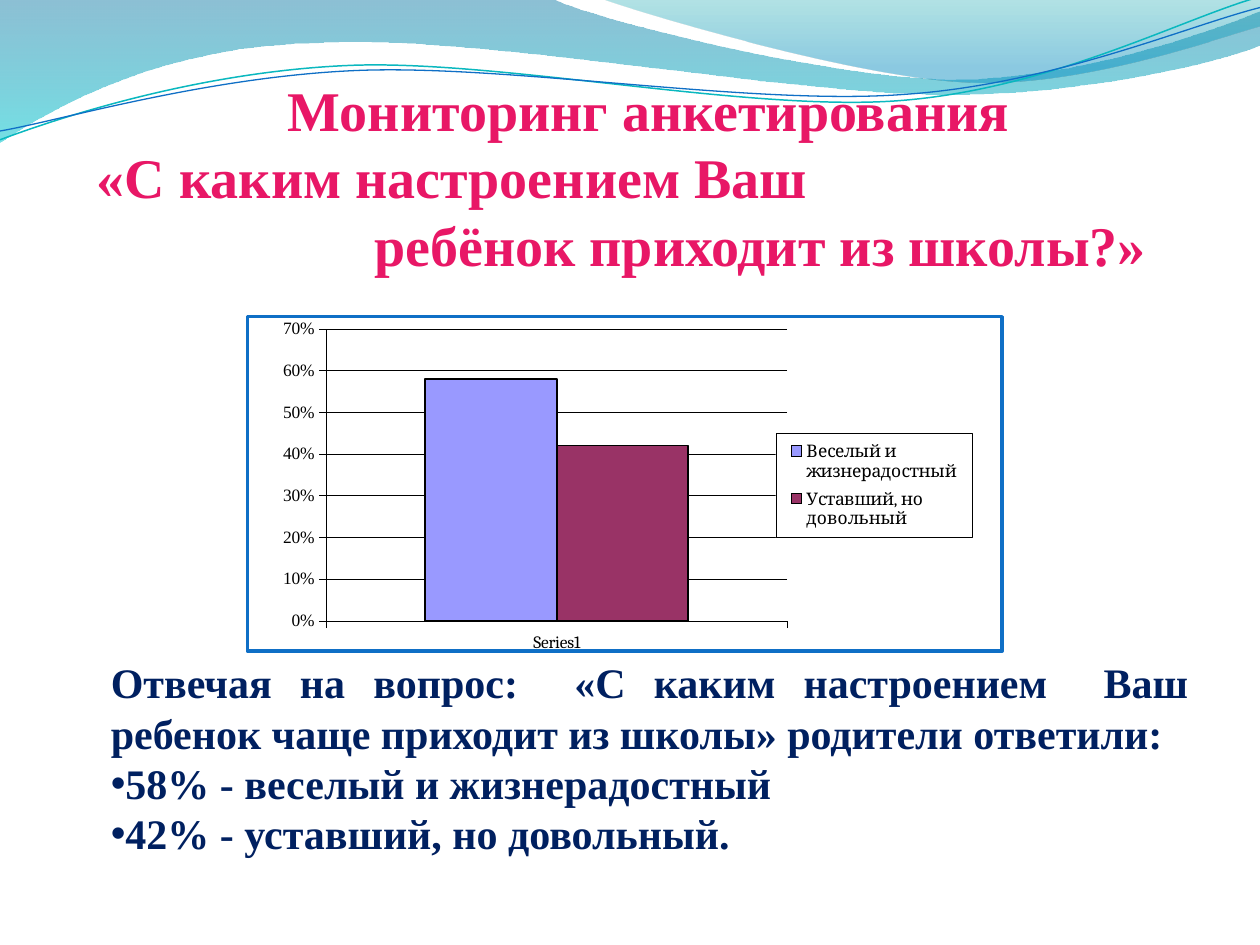
from lxml import etree
from pptx import Presentation
from pptx.chart.data import CategoryChartData
from pptx.dml.color import RGBColor
from pptx.enum.chart import XL_CHART_TYPE, XL_LEGEND_POSITION, XL_TICK_LABEL_POSITION, XL_TICK_MARK
from pptx.enum.text import MSO_ANCHOR, MSO_AUTO_SIZE, PP_ALIGN
from pptx.oxml import parse_xml
from pptx.oxml.ns import nsdecls, qn
from pptx.util import Cm, Pt

PINK = RGBColor(0xE8, 0x17, 0x66)
NAVY = RGBColor(0x00, 0x20, 0x60)
BLUE = RGBColor(0x0F, 0x6F, 0xC6)
TEAL = RGBColor(0x0A, 0xB8, 0xBF)
BLACK = RGBColor(0, 0, 0)
LILAC = RGBColor(0x99, 0x99, 0xFF)
PLUM = RGBColor(0x99, 0x33, 0x66)
SERIF = "Times New Roman"
UNIT = Cm(0.0254)

# Each wave: a start point, then segments of one point (line) or three (curve), in UNITs
BAND = [(0, 0), [(440, 0)],
        [(476, 17), (664, 63), (758, 63)],
        [(853, 63), (958, 26), (1000, 9)], [(1000, 36)],
        [(983, 44), (870, 76), (746, 75)],
        [(622, 75), (382, 28), (257, 34)],
        [(129, 36), (46, 83), (0, 113)]]
CREST = [(479, 0),
         [(509, 11), (682, 62), (769, 65)],
         [(856, 69), (961, 32), (1000, 21)], [(1000, 0)]]
TEAL_LINE = [(0, 111),
             [(48, 93), (158, 57), (277, 52)],
             [(395, 47), (593, 89), (713, 80)],
             [(833, 71), (938, 15), (998, -2)]]
BLUE_LINE = [(0, 104),
             [(47, 96), (164, 61), (283, 56)],
             [(403, 51), (597, 84), (717, 75)],
             [(836, 67), (941, 21), (1000, 6)]]


def set_all(obj, **values):
    for name, value in values.items():
        setattr(obj, name, value)


def place(shape, box):
    set_all(shape, **dict(zip(("left", "top", "width", "height"), box)))


def add_wave(s, index, outline, closed):
    """Draw a wave behind the text, at the given depth, bending its curved segments."""
    start, *segments = outline
    ends = [seg[-1] for seg in segments]
    left, top = (min(axis) for axis in zip(start, *ends))
    fb = s.shapes.build_freeform(*start, scale=UNIT)
    fb.add_line_segments(ends, close=closed)
    sp = fb.convert_to_shape()
    for line, seg in zip(list(sp._element.iter(qn("a:lnTo"))), segments):
        if len(seg) == 3:
            line.tag = qn("a:cubicBezTo")
            for i, (x, y) in enumerate(seg[:2]):
                pt = etree.Element(qn("a:pt"), x=str(x - left), y=str(y - top))
                line.insert(i, pt)
    sp.shadow.inherit = False
    s.shapes._spTree.insert(2 + index, sp._element)
    return sp


def add_waves(s):
    fills = [(BAND, [(0, "0074A1", 45), (1, "00C6CF", 55)]),
             (CREST, [(0, "00A1A9", 30), (0.8, "008BBF", 45)])]
    for i, (outline, stops) in enumerate(fills):
        sp = add_wave(s, i, outline, True)
        sp.line.fill.background()
        sp.fill.gradient()
        sp.fill.gradient_angle = 270
        for stop, (pos, color, _) in zip(sp.fill.gradient_stops, stops):
            stop.position = pos
            stop.color.rgb = RGBColor.from_string(color)
        colors = sp._element.spPr.iter(qn("a:srgbClr"))
        for clr, (_, _, alpha) in zip(colors, stops):
            etree.SubElement(clr, qn("a:alpha")).set("val", str(alpha * 1000))
    lines = [(TEAL_LINE, TEAL, 0.85), (BLUE_LINE, BLUE, 0.75)]
    for i, (outline, color, width) in enumerate(lines, len(fills)):
        sp = add_wave(s, i, outline, False)
        sp.fill.background()
        sp.line.color.rgb = color
        sp.line.width = Pt(width)


def fill_text(shape, box, lines, size, color):
    """Place a placeholder; lines are (text, alignment, left indent, bullet)."""
    place(shape, box)
    tf = shape.text_frame
    set_all(tf, word_wrap=True, auto_size=MSO_AUTO_SIZE.NONE, vertical_anchor=MSO_ANCHOR.TOP)
    for i, (text, align, indent, bullet) in enumerate(lines):
        p = tf.add_paragraph() if i else tf.paragraphs[0]
        set_all(p, alignment=align, line_spacing=1.0, space_before=Pt(0), space_after=Pt(0))
        pPr = p._p.get_or_add_pPr()
        pPr.set("marL", str(indent))
        pPr.set("indent", "0")
        if bullet:
            etree.SubElement(pPr, qn("a:buChar")).set("char", bullet)
        else:
            etree.SubElement(pPr, qn("a:buNone"))
        r = p.add_run()
        r.text = text
        set_all(r.font, name=SERIF, size=Pt(size), bold=True)
        r.font.color.rgb = color


def set_layout(parent, index, x, y, w, h, inner=False):
    """Give a plot area or legend a fixed place, as shares of the chart."""
    for old in parent.findall(qn("c:layout")):
        parent.remove(old)
    target = '<c:layoutTarget val="inner"/>' if inner else ""
    values = "".join(f'<c:{k} val="{v}"/>' for k, v in zip("xywh", (x, y, w, h)))
    parent.insert(index, parse_xml(
        f'<c:layout {nsdecls("c")}><c:manualLayout>{target}<c:xMode val="edge"/>'
        f'<c:yMode val="edge"/>{values}</c:manualLayout></c:layout>'))


def frame(before, color, width):
    """Insert a white fill and a border ahead of a chart part's text settings."""
    before.addprevious(parse_xml(
        f'<c:spPr {nsdecls("c", "a")}><a:solidFill><a:srgbClr val="FFFFFF"/></a:solidFill>'
        f'<a:ln w="{Pt(width)}"><a:solidFill><a:srgbClr val="{color}"/></a:solidFill></a:ln></c:spPr>'))


def add_mood_chart(s, box):
    data = CategoryChartData(number_format="0%")
    data.categories = ["Series1"]
    data.add_series("Веселый и жизнерадостный", [0.58])
    data.add_series("Уставший, но довольный", [0.42])
    chart = s.shapes.add_chart(XL_CHART_TYPE.COLUMN_CLUSTERED, *box, data).chart
    set_all(chart, has_title=False, has_legend=True)
    set_all(chart.font, name="Cambria", size=Pt(10))
    chart.font.color.rgb = BLACK

    plot = chart.plots[0]
    set_all(plot, gap_width=150, overlap=0, vary_by_categories=False)
    for series, color in zip(plot.series, (LILAC, PLUM)):
        series.format.fill.solid()
        series.format.fill.fore_color.rgb = color
        series.format.line.color.rgb = BLACK
        series.format.line.width = Pt(1)

    cat, val = chart.category_axis, chart.value_axis
    cat.tick_label_position = XL_TICK_LABEL_POSITION.LOW
    set_all(val, minimum_scale=0, maximum_scale=0.7, major_unit=0.1, has_major_gridlines=True)
    set_all(val.tick_labels, number_format="0%", number_format_is_linked=False)
    set_all(val.tick_labels.font, name=SERIF, size=Pt(10))
    for axis in (cat, val):
        axis.major_tick_mark = XL_TICK_MARK.OUTSIDE
    for part in (cat, val, val.major_gridlines):
        part.format.line.color.rgb = BLACK
        part.format.line.width = Pt(0.25)

    legend = chart.legend
    set_all(legend, position=XL_LEGEND_POSITION.RIGHT, include_in_layout=False)
    set_all(legend.font, name="Cambria", size=Pt(10))
    set_layout(legend._element, 1, 0.7, 0.35, 0.26, 0.31)
    set_layout(chart._chartSpace.chart.plotArea, 0, 0.105, 0.036, 0.61, 0.874, inner=True)
    frame(legend._element.find(qn("c:txPr")), BLACK, 0.25)
    frame(chart._chartSpace.find(qn("c:txPr")), BLUE, 2)


def main():
    prs = Presentation()
    set_all(prs, slide_width=Cm(25.4), slide_height=Cm(19.05))
    s = prs.slides.add_slide(prs.slide_layouts[1])
    title, body = s.placeholders
    add_waves(s)
    fill_text(title, (Cm(1.7), Cm(1.4), Cm(22.76), Cm(5.38)), [
        ("Мониторинг анкетирования", PP_ALIGN.CENTER, 0, None),
        ("«С каким настроением Ваш", PP_ALIGN.LEFT, 0, None),
        ("ребёнок приходит из школы?»", PP_ALIGN.CENTER, Cm(4.5), None),
    ], 32, PINK)
    add_mood_chart(s, (Cm(4.95), Cm(6.35), Cm(15.29), Cm(6.81)))
    fill_text(body, (Cm(1.98), Cm(13.11), Cm(22.23), Cm(5.05)), [
        ("Отвечая на вопрос:  «С каким настроением  Ваш ребенок чаще приходит из школы» "
         "родители ответили:", PP_ALIGN.JUSTIFY, 0, None),
        ("58% - веселый и жизнерадостный", PP_ALIGN.JUSTIFY, 0, "•"),
        ("42% - уставший, но довольный.", PP_ALIGN.JUSTIFY, 0, "•"),
    ], 24, NAVY)
    prs.save("out.pptx")


if __name__ == "__main__":
    main()
